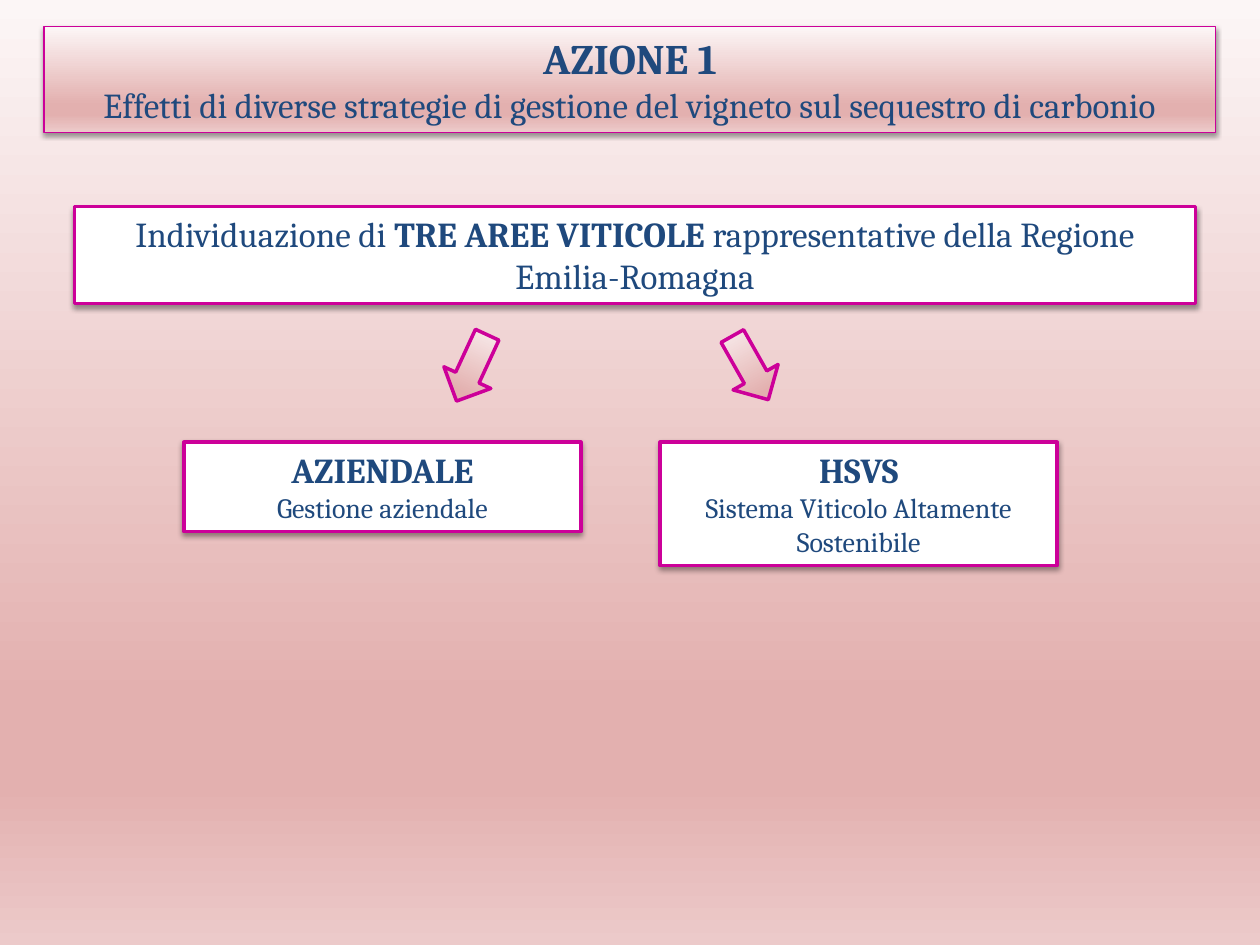
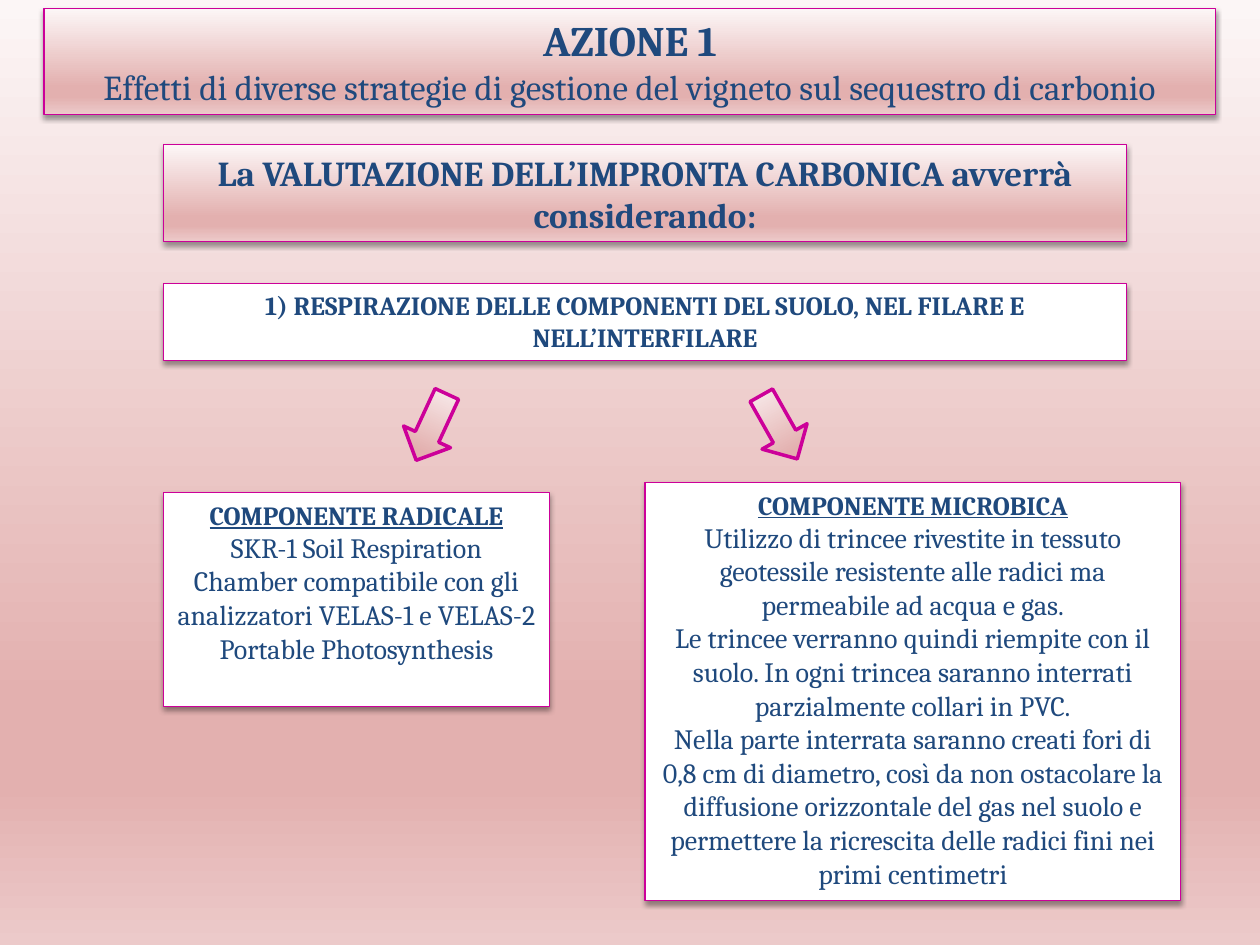
"""Build two slides on vineyard management and carbon sequestration."""
from dataclasses import dataclass

from lxml import etree
from pptx import Presentation
from pptx.dml.color import RGBColor
from pptx.enum.shapes import MSO_SHAPE
from pptx.enum.text import MSO_ANCHOR, PP_ALIGN
from pptx.oxml.ns import qn
from pptx.util import Inches, Pt

RECTANGLE = MSO_SHAPE.RECTANGLE
DOWN_ARROW = MSO_SHAPE.DOWN_ARROW
CENTER = PP_ALIGN.CENTER
TOP = MSO_ANCHOR.TOP

SLIDE_WIDTH, SLIDE_HEIGHT = Inches(10), Inches(7.5)
COLUMN, ROW = SLIDE_WIDTH / 100, SLIDE_HEIGHT / 75
ARROW_SIZE = (4.1, 5.8)
ARROW_ROTATIONS = (24.8, 330.5)


@dataclass(frozen=True)
class Theme:
    """Colours, font, type sizes and line widths shared by the slides."""
    font: str = "Cambria"
    ink: str = "1F497D"
    border: str = "CC0099"
    panel: str = "FFFFFF"
    shadow: str = "000000"
    blush: tuple = ((0, "FCF6F6"), (74, "E3B0AF"), (83, "E3B0AF"), (100, "ECCACA"))
    title: int = 24
    lead: int = 20
    body: int = 16
    label: int = 15
    thin: float = 0.75
    thick: float = 2


THEME = Theme()


@dataclass(frozen=True)
class Line:
    """One paragraph; its text alternates plain and bold at each asterisk."""
    text: str
    size: int
    bold: bool = False
    underline: bool = False


def add_colour(parent, colour):
    """Append an RGB colour element and return it."""
    return etree.SubElement(parent, qn("a:srgbClr"), val=colour)


def paint_blush(fill, owner):
    """Give a fill the theme's vertical gradient."""
    fill.gradient()
    fill.gradient_angle = 270
    stops = next(owner.iter(qn("a:gsLst")))
    for stop in list(stops):
        stops.remove(stop)
    for position, colour in THEME.blush:
        add_colour(etree.SubElement(stops, qn("a:gs"), pos=str(position * 1000)), colour)


def cast_shadow(shape):
    """Drop a soft shadow below a shape."""
    effects = next(shape._element.iter(qn("a:effectLst")))
    shadow = etree.SubElement(effects, qn("a:outerShdw"), blurRad=str(Pt(3.1)),
                              dist=str(Pt(1.6)), dir="5400000", rotWithShape="0")
    etree.SubElement(add_colour(shadow, THEME.shadow), qn("a:alpha"), val="38000")


def add_outlined(slide, kind, place, line_width, blush):
    """Add a bordered shape at (left, top, width, height) in columns and rows."""
    left, top, width, height = place
    shape = slide.shapes.add_shape(kind, round(left * COLUMN), round(top * ROW),
                                   round(width * COLUMN), round(height * ROW))
    shape.shadow.inherit = False
    if blush:
        paint_blush(shape.fill, shape._element)
    else:
        shape.fill.solid()
        shape.fill.fore_color.rgb = RGBColor.from_string(THEME.panel)
    shape.line.color.rgb = RGBColor.from_string(THEME.border)
    shape.line.width = Pt(line_width)
    return shape


def write_line(paragraph, line):
    """Write one centred paragraph in the theme's font."""
    pieces = line.text.split("*")
    for index, piece in enumerate(pieces):
        run = paragraph.add_run()
        run.text = piece
        if len(pieces) > 1:
            run.font.bold = index % 2 == 1
    paragraph.alignment = CENTER
    font = paragraph.font
    font.name, font.size = THEME.font, Pt(line.size)
    font.bold, font.underline = line.bold, line.underline
    font.color.rgb = RGBColor.from_string(THEME.ink)


def add_panel(slide, place, lines, line_width=THEME.thin, blush=False):
    """Add a shadowed box holding centred lines of text."""
    panel = add_outlined(slide, RECTANGLE, place, line_width, blush)
    cast_shadow(panel)
    frame = panel.text_frame
    frame.word_wrap = True
    frame.vertical_anchor = TOP
    for index, line in enumerate(lines):
        write_line(frame.add_paragraph() if index else frame.paragraphs[0], line)


def add_arrow_pair(slide, lefts, top):
    """Add two arrows that point down and outwards."""
    for left, rotation in zip(lefts, ARROW_ROTATIONS):
        arrow = add_outlined(slide, DOWN_ARROW, (left, top, *ARROW_SIZE), THEME.thick, True)
        arrow.rotation = rotation


def add_action_slide(deck, title_top):
    """Add a blank slide with the gradient background and the action title."""
    slide = deck.slides.add_slide(deck.slide_layouts[6])
    paint_blush(slide.background.fill, slide._element)
    add_panel(slide, (3.5, title_top, 93, 8.4), [
        Line("AZIONE 1", THEME.title, bold=True),
        Line("Effetti di diverse strategie di gestione del vigneto sul sequestro di carbonio",
             THEME.lead),
    ], blush=True)
    return slide


def build_areas(deck):
    """Show the choice of vineyard areas and the two management systems."""
    slide = add_action_slide(deck, 2.1)
    add_panel(slide, (5.9, 16.4, 89, 7.7), [
        Line("Individuazione di *TRE AREE VITICOLE *rappresentative della Regione "
             "Emilia-Romagna", THEME.lead),
    ], THEME.thick)
    add_arrow_pair(slide, (35.4, 57.5), 26.3)
    systems = (
        (14.6, 7.1, "AZIENDALE", "Gestione aziendale"),
        (52.4, 9.8, "HSVS", "Sistema Viticolo Altamente Sostenibile"),
    )
    for left, height, name, meaning in systems:
        add_panel(slide, (left, 35.1, 31.5, height), [
            Line(name, THEME.lead, bold=True),
            Line(meaning, THEME.body),
        ], THEME.thick)


def build_footprint(deck):
    """Show how soil respiration enters the carbon footprint."""
    slide = add_action_slide(deck, 0.7)
    add_panel(slide, (13, 11.5, 76.4, 7.7), [
        Line("La VALUTAZIONE DELL’IMPRONTA CARBONICA avverrà considerando:",
             THEME.lead, bold=True),
    ], blush=True)
    add_panel(slide, (13, 22.5, 76.4, 6.1), [
        Line("1) RESPIRAZIONE DELLE COMPONENTI DEL SUOLO, NEL FILARE E NELL’INTERFILARE",
             THEME.label, bold=True),
    ])
    components = (
        ((13, 39.1, 30.6, 17), "COMPONENTE RADICALE", (
            "SKR-1 Soil Respiration Chamber compatibile con gli analizzatori "
            "VELAS-1 e VELAS-2 Portable Photosynthesis",
        )),
        ((51.2, 38.3, 42.5, 33.2), "COMPONENTE MICROBICA", (
            "Utilizzo di trincee rivestite in tessuto geotessile resistente alle radici "
            "ma permeabile ad acqua e gas.",
            "Le trincee verranno quindi riempite con il suolo. In ogni trincea saranno "
            "interrati parzialmente collari in PVC.",
            "Nella parte interrata saranno creati fori di 0,8 cm di diametro, così da non "
            "ostacolare la diffusione orizzontale del gas nel suolo e permettere la "
            "ricrescita delle radici fini nei primi centimetri",
        )),
    )
    for place, heading, methods in components:
        add_panel(slide, place, [
            Line(heading, THEME.label, bold=True, underline=True),
            *(Line(method, THEME.body) for method in methods),
        ])
    add_arrow_pair(slide, (32.2, 59.8), 31)


def main():
    """Build and save the deck."""
    deck = Presentation()
    deck.slide_width, deck.slide_height = SLIDE_WIDTH, SLIDE_HEIGHT
    build_areas(deck)
    build_footprint(deck)
    deck.save("out.pptx")


if __name__ == "__main__":
    main()
